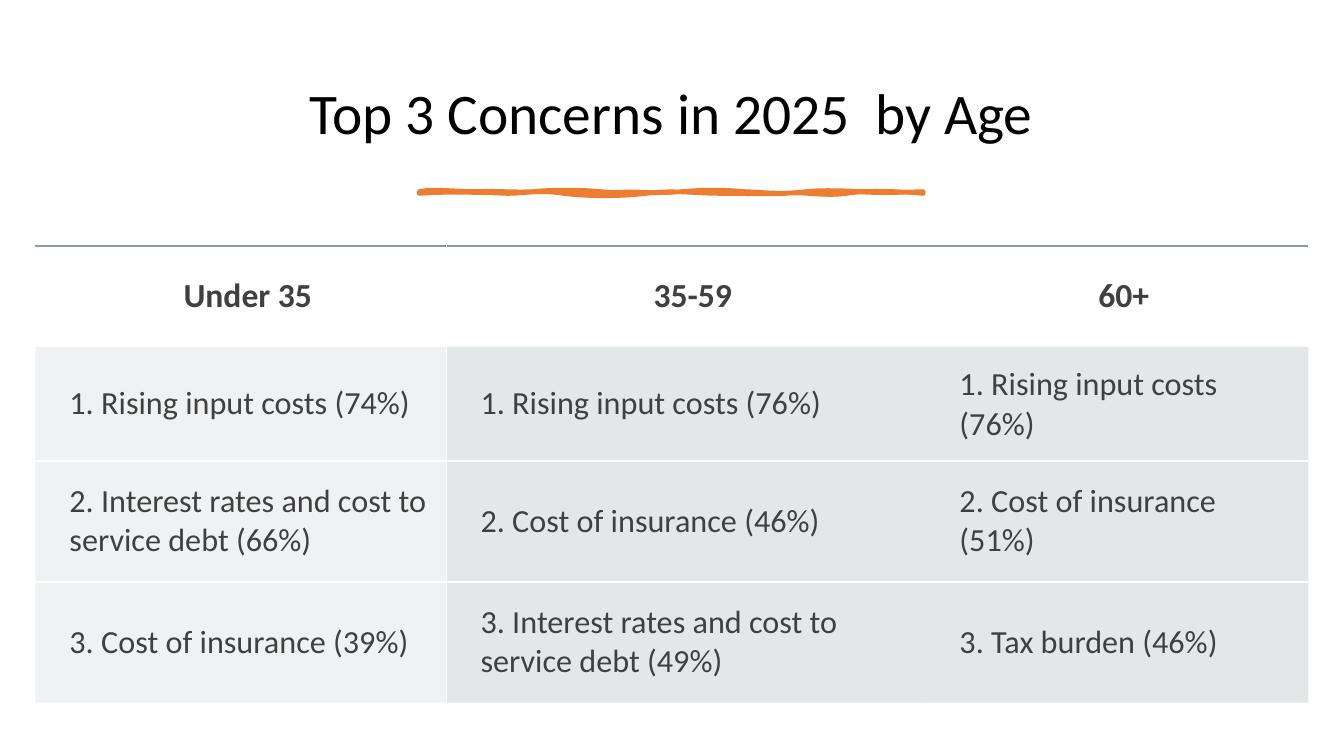
from pptx import Presentation
from pptx import util as u
from pptx.dml import color
from pptx.enum import text
from pptx.oxml import ns
from lxml import etree

COLORS = {"ink": "000000", "body": "404040", "accent": "ED7D31",
          "rule": "8F9A9D", "band": "B4BCBE", "white": "FFFFFF"}
FONT = "Calibri"
CM_PER_INCH = 2.54

ROWS = [
    ["Under 35", "35-59", "60+"],
    ["1. Rising input costs (74%)", "1. Rising input costs (76%)",
     "1. Rising input costs (76%)"],
    ["2. Interest rates and cost to service debt (66%)",
     "2. Cost of insurance (46%)", "2. Cost of insurance (51%)"],
    ["3. Cost of insurance (39%)",
     "3. Interest rates and cost to service debt (49%)", "3. Tax burden (46%)"],
]
COL_WIDTHS = [10.36, 12.07, 9.65]
ROW_HEIGHTS = [2.54, 2.11, 3.05, 3.05]

STROKE_LEFT, STROKE_TOP, STROKE_RIGHT, STROKE_BOTTOM = 4.16, 1.9, 9.16, 1.92
STROKE_EDGE = [
    (4.28, 1.87, 4.54, 1.9, 4.73, 1.9), (4.92, 1.89, 5.09, 1.91, 5.29, 1.9),
    (5.49, 1.88, 5.74, 1.88, 5.96, 1.9), (6.17, 1.92, 6.53, 1.92, 6.77, 1.9),
    (7.02, 1.88, 7.14, 1.88, 7.39, 1.9), (7.63, 1.91, 7.74, 1.93, 8, 1.9),
    (8.26, 1.87, 8.67, 1.92, 9.16, 1.9), (9.17, 1.91, 9.16, 1.91, 9.16, 1.92),
    (8.95, 1.9, 8.65, 1.88, 8.4, 1.92), (8.15, 1.95, 8.01, 1.9, 7.79, 1.92),
    (7.56, 1.93, 7.47, 1.92, 7.17, 1.92), (6.87, 1.92, 6.67, 1.88, 6.41, 1.92),
    (6.14, 1.95, 5.85, 1.95, 5.59, 1.92), (5.34, 1.88, 5.23, 1.92, 5.03, 1.92),
    (4.83, 1.91, 4.38, 1.9, 4.16, 1.92), (4.16, 1.91, 4.16, 1.9, 4.16, 1.9),
]
STROKE_BODY = [
    (4.32, 1.89, 4.52, 1.88, 4.78, 1.9), (5.03, 1.91, 5.08, 1.92, 5.34, 1.9),
    (5.6, 1.88, 5.74, 1.92, 5.96, 1.9), (6.18, 1.87, 6.39, 1.88, 6.67, 1.9),
    (6.95, 1.91, 7.24, 1.87, 7.44, 1.9), (7.63, 1.92, 8.02, 1.88, 8.25, 1.9),
    (8.48, 1.91, 8.72, 1.93, 9.16, 1.9), (9.16, 1.9, 9.16, 1.91, 9.16, 1.92),
    (8.79, 1.94, 8.76, 1.94, 8.4, 1.92), (8.04, 1.89, 7.96, 1.91, 7.59, 1.92),
    (7.21, 1.92, 7.16, 1.88, 6.77, 1.92), (6.39, 1.96, 6.37, 1.9, 6.21, 1.92),
    (6.04, 1.93, 5.72, 1.93, 5.44, 1.92), (5.17, 1.9, 5.04, 1.91, 4.78, 1.92),
    (4.52, 1.92, 4.41, 1.89, 4.16, 1.92), (4.16, 1.91, 4.16, 1.9, 4.16, 1.9),
]


def rgb(name):
    return color.RGBColor.from_string(COLORS[name])


def write(tf, words, size, ink="body", bold=False, align=None, spacing=None):
    tf.word_wrap = True
    p = tf.paragraphs[0]
    p.alignment = align
    p.line_spacing = spacing
    r = p.add_run()
    r.text = words
    r.font.name = FONT
    r.font.size = u.Pt(size)
    r.font.bold = bold
    r.font.color.rgb = rgb(ink)


def add_title(s, words):
    tf = s.shapes.add_textbox(u.Cm(1.78), u.Cm(1.17), u.Cm(30.3), u.Cm(3.48)).text_frame
    tf.vertical_anchor = text.MSO_ANCHOR.MIDDLE
    write(tf, words, 41, ink="ink", align=text.PP_ALIGN.CENTER, spacing=0.9)


def emu(inches):
    return u.Cm(inches * CM_PER_INCH)


def add_points(outline, tag, coords):
    segment = etree.SubElement(outline, ns.qn(tag))
    for x, y in zip(coords[::2], coords[1::2]):
        etree.SubElement(segment, ns.qn("a:pt"), x=str(emu(x - STROKE_LEFT)),
                         y=str(emu(y - STROKE_TOP)))


def add_outline(outlines, sp, curves, **paint):
    outline = etree.SubElement(outlines, ns.qn("a:path"), w=str(sp.width),
                               h=str(sp.height), **paint)
    add_points(outline, "a:moveTo", (STROKE_LEFT, STROKE_TOP))
    for curve in curves:
        add_points(outline, "a:cubicBezTo", curve)
    etree.SubElement(outline, ns.qn("a:close"))


def add_brush_stroke(s):
    left, top, right, bottom = map(emu, (STROKE_LEFT, STROKE_TOP, STROKE_RIGHT, STROKE_BOTTOM))
    builder = s.shapes.build_freeform(left, top)
    builder.add_line_segments([(right, top), (right, bottom), (left, bottom)])
    sp = builder.convert_to_shape()
    outlines = sp._element.spPr.find(".//" + ns.qn("a:pathLst"))
    outlines.clear()
    add_outline(outlines, sp, STROKE_EDGE, fill="none")
    add_outline(outlines, sp, STROKE_BODY, stroke="0")
    sp.shadow.inherit = False
    sp.fill.solid()
    sp.fill.fore_color.rgb = rgb("accent")
    sp.line.color.rgb = rgb("accent")
    sp.line.width = u.Pt(3.25)
    etree.SubElement(sp.line._get_or_add_ln(), ns.qn("a:round"))


def set_alpha(clr, percent):
    etree.SubElement(clr, ns.qn("a:alpha"), val=str(percent * 1000))


def set_borders(cell, borders):
    tc_pr = cell._tc.get_or_add_tcPr()
    for i, side in enumerate("LRTB"):
        ln = etree.Element(ns.qn("a:ln" + side), w=str(u.Pt(1.5)))
        tc_pr.insert(i, ln)
        name = borders[side]
        if name:
            fill = etree.SubElement(ln, ns.qn("a:solidFill"))
            clr = etree.SubElement(fill, ns.qn("a:srgbClr"), val=COLORS[name])
            if name == "rule":
                set_alpha(clr, 60)
        else:
            etree.SubElement(ln, ns.qn("a:noFill"))


def border_colors(row, col):
    return {
        "L": "white" if col == 1 else None,
        "R": "white" if col == 0 else None,
        "T": "rule" if row == 0 else "white" if row > 1 else None,
        "B": "white" if 0 < row < len(ROWS) - 1 else None,
    }


def fill_cell(cell, row, col):
    header = row == 0
    cell.vertical_anchor = text.MSO_ANCHOR.MIDDLE
    cell.margin_left = u.Cm(0.86)
    cell.margin_right = cell.margin_top = cell.margin_bottom = u.Cm(0.51 if header else 0.46)
    write(cell.text_frame, ROWS[row][col], 24 if header else 23, bold=header,
          align=text.PP_ALIGN.CENTER if header else text.PP_ALIGN.LEFT)
    if header:
        cell.fill.background()
    else:
        cell.fill.solid()
        cell.fill.fore_color.rgb = rgb("band")
        clr = cell._tc.tcPr.find(".//" + ns.qn("a:srgbClr"))
        set_alpha(clr, 20 if col == 0 else 35)
    set_borders(cell, border_colors(row, col))


def add_concerns_table(s):
    table = s.shapes.add_table(len(ROWS), len(COL_WIDTHS), u.Cm(0.89), u.Cm(6.2),
                               u.Cm(sum(COL_WIDTHS)), u.Cm(sum(ROW_HEIGHTS))).table
    table.first_row = table.horz_banding = False
    for column, width in zip(table.columns, COL_WIDTHS):
        column.width = u.Cm(width)
    for row, height in enumerate(ROW_HEIGHTS):
        table.rows[row].height = u.Cm(height)
        for col in range(len(COL_WIDTHS)):
            fill_cell(table.cell(row, col), row, col)


def main():
    prs = Presentation()
    prs.slide_width, prs.slide_height = u.Cm(33.87), u.Cm(19.05)
    s = prs.slides.add_slide(prs.slide_layouts[6])
    add_title(s, "Top 3 Concerns in 2025  by Age")
    add_brush_stroke(s)
    add_concerns_table(s)
    prs.save("out.pptx")


if __name__ == "__main__":
    main()
